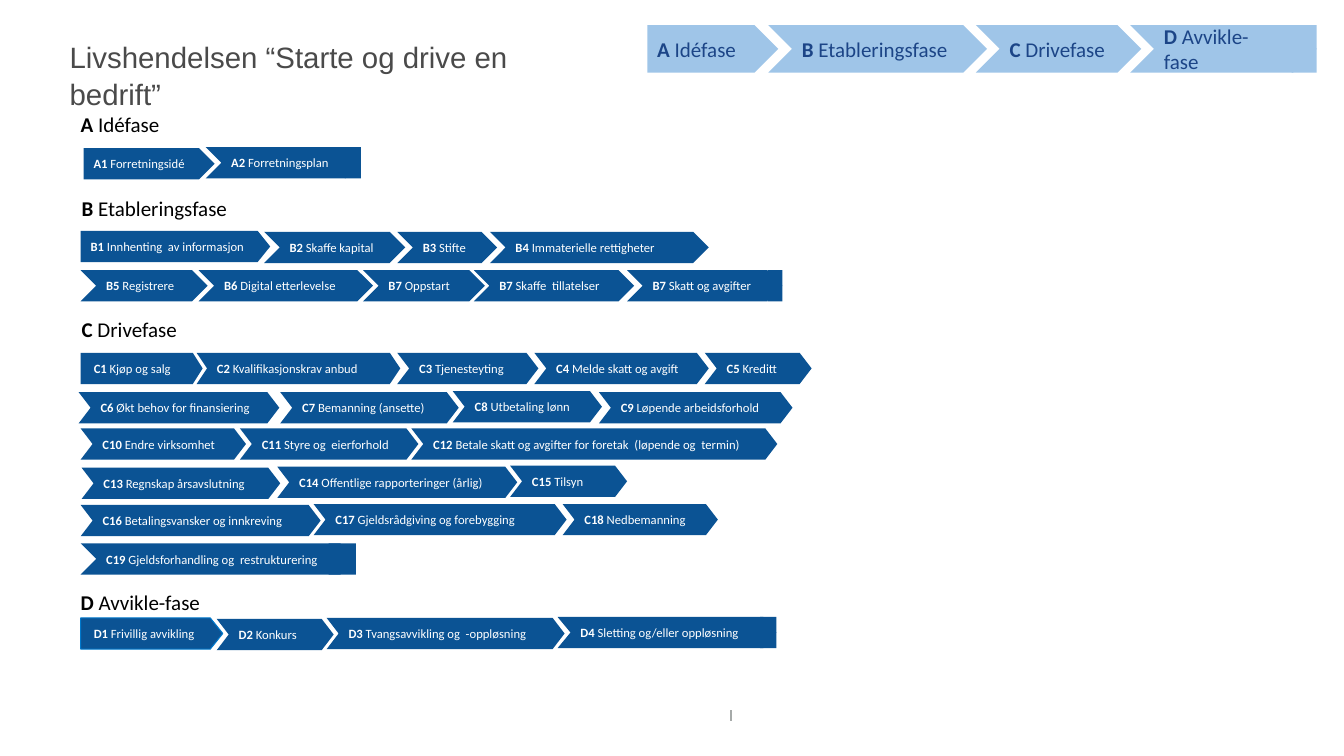
from dataclasses import dataclass

from lxml import etree
from pptx import Presentation
from pptx.dml.color import RGBColor
from pptx.enum.shapes import MSO_CONNECTOR, MSO_SHAPE as SHAPE
from pptx.enum.text import MSO_ANCHOR as ANCHOR, MSO_AUTO_SIZE, PP_ALIGN
from pptx.oxml.ns import qn
from pptx.util import Inches, Pt

DARK_BLUE = RGBColor(0x0B, 0x53, 0x94)
EDGE_BLUE = RGBColor(0x00, 0x78, 0xCC)
LIGHT_BLUE = RGBColor(0x9F, 0xC5, 0xE8)
NAVY = RGBColor(0x1C, 0x45, 0x87)
TITLE_GREY = RGBColor(0x4A, 0x4A, 0x4A)
LINE_GREY = RGBColor(0xA6, 0xAA, 0xA9)
BLACK = RGBColor(0, 0, 0)
WHITE = RGBColor(0xFF, 0xFF, 0xFF)

STEP_HEIGHT, PHASE_HEIGHT = 0.31, 0.47


@dataclass(frozen=True)
class Step:
    code: str
    name: str
    left: float
    width: float
    top: float
    adj: float = 0.383
    first: bool = False
    tail: float = 0  # width of the square end that covers the point
    inset: float = 0.1
    edge: bool = False


@dataclass(frozen=True)
class Heading:
    code: str
    name: str
    left: float
    top: float


@dataclass(frozen=True)
class Style:
    height: float
    fill: RGBColor
    color: RGBColor
    size: int


STEP_STYLE = Style(STEP_HEIGHT, DARK_BLUE, WHITE, 9)
PHASE_STYLE = Style(PHASE_HEIGHT, LIGHT_BLUE, NAVY, 15)

PHASES = [
    Step("A", "Idéfase", 6.42, 1.3, 0.25, 0.5, first=True),
    Step("B", "Etableringsfase", 7.62, 2.17, 0.25, 0.5),
    Step("C", "Drivefase", 9.68, 1.64, 0.25, 0.5),
    Step("D", "Avvikle-fase", 11.21, 1.85, 0.25, 0.5, tail=0.25),
]

HEADINGS = [
    Heading("A", "Idéfase", 0.67, 0.98),
    Heading("B", "Etableringsfase", 0.68, 1.81),
    Heading("C", "Drivefase", 0.68, 3.01),
    Heading("D", "Avvikle-fase", 0.67, 5.72),
]

STEPS = [
    Step("A1", "Forretningsidé", 0.83, 1.3, 1.47, 0.5, first=True),
    Step("A2", "Forretningsplan", 2.04, 1.54, 1.46, 0.5, tail=0.16),
    Step("B1", "Innhenting  av informasjon", 0.8, 1.88, 2.29, 0.402, first=True),
    Step("B2", "Skaffe kapital", 2.62, 1.4, 2.3, 0.5),
    Step("B3", "Stifte", 3.94, 0.99, 2.3, 0.5),
    Step("B4", "Immaterielle rettigheter", 4.86, 2.17, 2.3, 0.5),
    Step("B5", "Registrere", 0.8, 1.26, 2.68, 0.5),
    Step("B6", "Digital etterlevelse", 1.97, 1.73, 2.68, 0.5),
    Step("B7", "Oppstart", 3.6, 1.21, 2.68, 0.5),
    Step("B7", "Skaffe  tillatelser", 4.7, 1.59, 2.68, 0.5),
    Step("B7", "Skatt og avgifter", 6.22, 1.54, 2.68, 0.5, tail=0.15),
    Step("C1", "Kjøp og salg", 0.8, 1.21, 3.5, 0.316, first=True, inset=0.13),
    Step("C2", "Kvalifikasjonskrav anbud", 1.95, 2.02, 3.5, 0.335),
    Step("C3", "Tjenesteyting", 3.94, 1.4, 3.5),
    Step("C4", "Melde skatt og avgift", 5.3, 1.73, 3.5),
    Step("C5", "Kreditt", 6.99, 1.06, 3.5),
    Step("C6", "Økt behov for finansiering", 0.78, 1.99, 3.89),
    Step("C7", "Bemanning (ansette)", 2.78, 1.77, 3.89),
    Step("C8", "Utbetaling lønn", 4.49, 1.48, 3.88),
    Step("C9", "Løpende arbeidsforhold", 5.94, 1.92, 3.89),
    Step("C10", "Endre virksomhet", 0.8, 1.64, 4.25),
    Step("C11", "Styre og  eierforhold", 2.38, 1.77, 4.25),
    Step("C12", "Betale skatt og avgifter for foretak  (løpende og  termin)",
         4.08, 3.63, 4.25),
    Step("C13", "Regnskap årsavslutning", 0.81, 1.97, 4.64),
    Step("C14", "Offentlige rapporteringer (årlig)", 2.75, 2.38, 4.63),
    Step("C15", "Tilsyn", 5.06, 1.16, 4.62),
    Step("C16", "Betalingsvansker og innkreving", 0.8, 2.38, 5.01),
    Step("C17", "Gjeldsrådgiving og forebygging", 3.11, 2.51, 5),
    Step("C18", "Nedbemanning", 5.58, 1.54, 5),
    Step("C19", "Gjeldsforhandling og  restrukturering", 0.8, 2.73, 5.39, 0.5,
         tail=0.27),
    Step("D1", "Frivillig avvikling", 0.8, 1.41, 6.13, 0.402, first=True,
         inset=0.13, edge=True),
    Step("D2", "Konkurs", 2.15, 1.16, 6.14),
    Step("D3", "Tvangsavvikling og  -oppløsning", 3.24, 2.36, 6.13),
    Step("D4", "Sletting og/eller oppløsning", 5.53, 2.17, 6.12, 0.417, tail=0.16),
]


def set_frame(tf, side: float, anchor) -> None:
    frame_format = {
        "margin_left": Inches(side), "margin_right": Inches(side),
        "margin_top": Inches(0.13), "margin_bottom": Inches(0.13),
        "vertical_anchor": anchor, "word_wrap": True,
        "auto_size": MSO_AUTO_SIZE.NONE,
    }
    for name, value in frame_format.items():
        setattr(tf, name, value)


def add_run(p, text: str, font: str, size: int, color: RGBColor,
            bold: bool = False) -> None:
    r = p.add_run()
    r.text = text
    for name, value in {"name": font, "size": Pt(size), "bold": bold}.items():
        setattr(r.font, name, value)
    r.font.color.rgb = color


def add_label(tf, code: str, name: str, size: int, color: RGBColor) -> None:
    """Write a bold code followed by a regular name."""
    p = tf.paragraphs[0]
    p.alignment = PP_ALIGN.LEFT
    add_run(p, f"{code} ", "Calibri", size, color, bold=True)
    add_run(p, name, "Calibri", size, color)


def add_filled(s, kind, left: float, top: float, width: float, height: float,
               fill: RGBColor):
    sp = s.shapes.add_shape(kind, Inches(left), Inches(top), Inches(width),
                            Inches(height))
    sp.shadow.inherit = False
    sp.fill.solid()
    sp.fill.fore_color.rgb = fill
    sp.line.fill.background()
    return sp


def add_step(s, step: Step, style: Style) -> None:
    if step.tail:
        add_filled(s, SHAPE.RECTANGLE, step.left + step.width - step.tail,
                   step.top, step.tail, style.height, style.fill)
    kind = SHAPE.PENTAGON if step.first else SHAPE.CHEVRON
    sp = add_filled(s, kind, step.left, step.top, step.width, style.height,
                    style.fill)
    sp.adjustments[0] = step.adj
    if step.edge:
        sp.line.color.rgb = EDGE_BLUE
        sp.line.width = Pt(0.75)
    set_frame(sp.text_frame, step.inset, ANCHOR.MIDDLE)
    add_label(sp.text_frame, step.code, step.name, style.size, style.color)


def add_heading(s, heading: Heading) -> None:
    box = s.shapes.add_textbox(Inches(heading.left), Inches(heading.top),
                               Inches(4), Inches(0.47))
    set_frame(box.text_frame, 0.13, ANCHOR.TOP)
    add_label(box.text_frame, heading.code, heading.name, 15, BLACK)


def add_title(s, text: str) -> None:
    title = s.shapes.title
    place = {"left": 0.56, "top": 0.23, "width": 5.53, "height": 0.56}
    for name, value in place.items():
        setattr(title, name, Inches(value))
    set_frame(title.text_frame, 0.13, ANCHOR.TOP)
    p = title.text_frame.paragraphs[0]
    p.alignment = PP_ALIGN.LEFT
    p.line_spacing = 1.07
    add_run(p, text, "Arial", 21, TITLE_GREY)


def add_footer_mark(s) -> None:
    mark = s.shapes.add_connector(MSO_CONNECTOR.STRAIGHT, Inches(7.25),
                                  Inches(7.15), Inches(7.25), Inches(7.04))
    mark.line.color.rgb = LINE_GREY
    mark.line.width = Pt(1.5)
    etree.SubElement(mark._element.spPr, qn("a:effectLst"))


def main() -> None:
    prs = Presentation()
    prs.slide_width, prs.slide_height = Inches(13.33), Inches(7.5)
    s = prs.slides.add_slide(prs.slide_layouts[5])
    add_title(s, "Livshendelsen “Starte og drive en bedrift”")
    add_footer_mark(s)
    for step in STEPS:
        add_step(s, step, STEP_STYLE)
    for heading in HEADINGS:
        add_heading(s, heading)
    for phase in PHASES:
        add_step(s, phase, PHASE_STYLE)
    prs.save("out.pptx")


if __name__ == "__main__":
    main()
